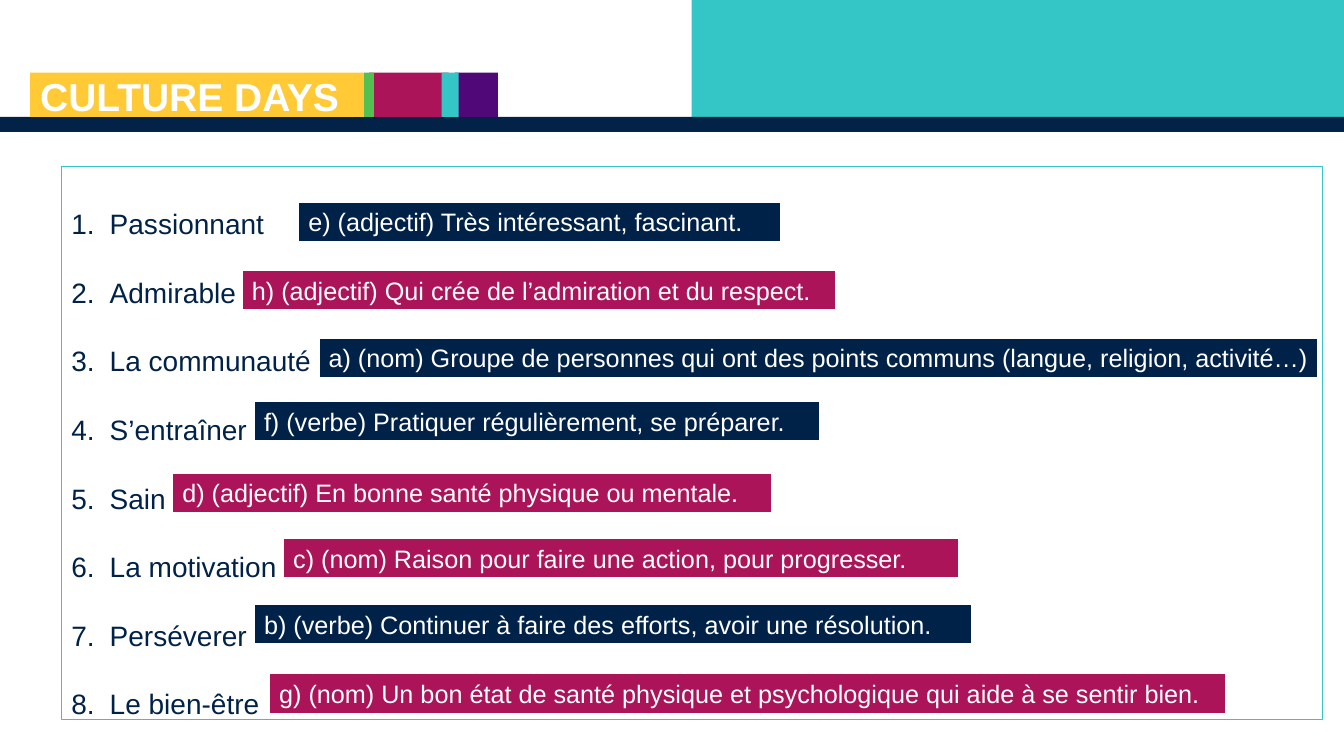
from pptx import Presentation
from pptx.dml.color import RGBColor
from pptx.enum.shapes import MSO_SHAPE as Shape
from pptx.enum.text import MSO_ANCHOR as Anchor, PP_ALIGN as Align
from pptx.util import Inches, Pt
from lxml import etree

COLORS = {
    "white": "FFFFFF", "navy": "002248", "band": "032248", "teal": "34C6C6",
    "purple": "500778", "magenta": "AC145A", "green": "52C152", "yellow": "FFCA36",
}
DRAWING = "{http://schemas.openxmlformats.org/drawingml/2006/main}"

# Header bars, back to front: left, top, width, height, colour
HEADER_BARS = [
    (6.86, 0, 6.48, 1.16, "teal"),
    (0, 1.16, 13.33, 0.15, "band"),
    (4.51, 0.72, 0.43, 0.44, "purple"),
    (3.66, 0.72, 0.79, 0.44, "magenta"),
    (4.38, 0.72, 0.17, 0.44, "teal"),
    (3.61, 0.72, 0.1, 0.44, "green"),
    (0.3, 0.72, 3.31, 0.44, "yellow"),
]

# Word, then its definition box: left, top, width, colour, text
VOCABULARY = [
    ("Passionnant", 2.96, 2, 4.79, "navy",
     "e) (adjectif) Très intéressant, fascinant."),
    ("Admirable", 2.4, 2.68, 5.89, "magenta",
     "h) (adjectif) Qui crée de l’admiration et du respect."),
    ("La communauté", 3.16, 3.35, 9.91, "navy",
     "a) (nom) Groupe de personnes qui ont des points communs (langue, religion, activité…)"),
    ("S’entraîner", 2.52, 3.98, 5.61, "navy",
     "f) (verbe) Pratiquer régulièrement, se préparer."),
    ("Sain", 1.71, 4.69, 5.95, "magenta",
     "d) (adjectif) En bonne santé physique ou mentale."),
    ("La motivation", 2.81, 5.34, 6.7, "magenta",
     "c) (nom) Raison pour faire une action, pour progresser."),
    ("Perséverer", 2.52, 5.99, 7.12, "navy",
     "b) (verbe) Continuer à faire des efforts, avoir une résolution."),
    ("Le bien-être", 2.67, 6.68, 9.49, "magenta",
     "g) (nom) Un bon état de santé physique et psychologique qui aide à se sentir bien."),
]


def color(name):
    return RGBColor.from_string(COLORS[name])


def add_box(page, left, top, width, height, fill, line=None, line_width=1):
    box = page.shapes.add_shape(
        Shape.RECTANGLE, Inches(left), Inches(top), Inches(width), Inches(height))
    box.shadow.inherit = False
    box.fill.solid()
    box.fill.fore_color.rgb = color(fill)
    if line:
        box.line.color.rgb = color(line)
        box.line.width = Pt(line_width)
    else:
        box.line.fill.background()
    return box


def style(para, size, ink, bold=False):
    para.alignment = Align.LEFT
    for span in para.runs:
        span.font.name = "Arial"
        span.font.size = Pt(size)
        span.font.bold = bold
        span.font.color.rgb = color(ink)


def number(para, indent):
    properties = para._p.get_or_add_pPr()
    properties.set("marL", str(Inches(indent)))
    properties.set("indent", str(-Inches(indent)))
    etree.SubElement(properties, DRAWING + "buFont", typeface="+mj-lt")
    etree.SubElement(properties, DRAWING + "buAutoNum", type="arabicPeriod")


def add_title(page, text):
    box = page.shapes.add_textbox(Inches(0.3), Inches(0.75), Inches(4.15), Inches(0.48))
    frame = box.text_frame
    frame.word_wrap = True
    frame.vertical_anchor = Anchor.BOTTOM
    frame.text = text
    frame.paragraphs[0].line_spacing = 0.8
    style(frame.paragraphs[0], 27.8, "white", bold=True)


def add_word_list(page, words):
    frame = add_box(page, 0.61, 1.65, 12.51, 5.49, "white", "teal").text_frame
    frame.word_wrap = True
    frame.vertical_anchor = Anchor.TOP
    frame.margin_top = Inches(0.4)
    frame.text = "\n".join(words)
    for index, para in enumerate(frame.paragraphs):
        number(para, 0.38)
        if index:
            para.space_before = Pt(25)
        style(para, 20, "navy")


def add_definition(page, left, top, width, fill, text):
    frame = add_box(page, left, top, width, 0.4, fill, "white", 1.5).text_frame
    frame.word_wrap = True
    frame.vertical_anchor = Anchor.MIDDLE
    frame.text = text
    style(frame.paragraphs[0], 18, "white")


def main():
    deck = Presentation()
    deck.slide_width, deck.slide_height = Inches(13.33), Inches(7.5)
    page = deck.slides.add_slide(deck.slide_layouts[6])

    # Header
    for bar in HEADER_BARS:
        add_box(page, *bar)
    add_title(page, "CULTURE DAYS")

    # Words and their definitions
    add_word_list(page, [word for word, *_ in VOCABULARY])
    for _, *definition in VOCABULARY:
        add_definition(page, *definition)

    deck.save("out.pptx")


if __name__ == "__main__":
    main()
